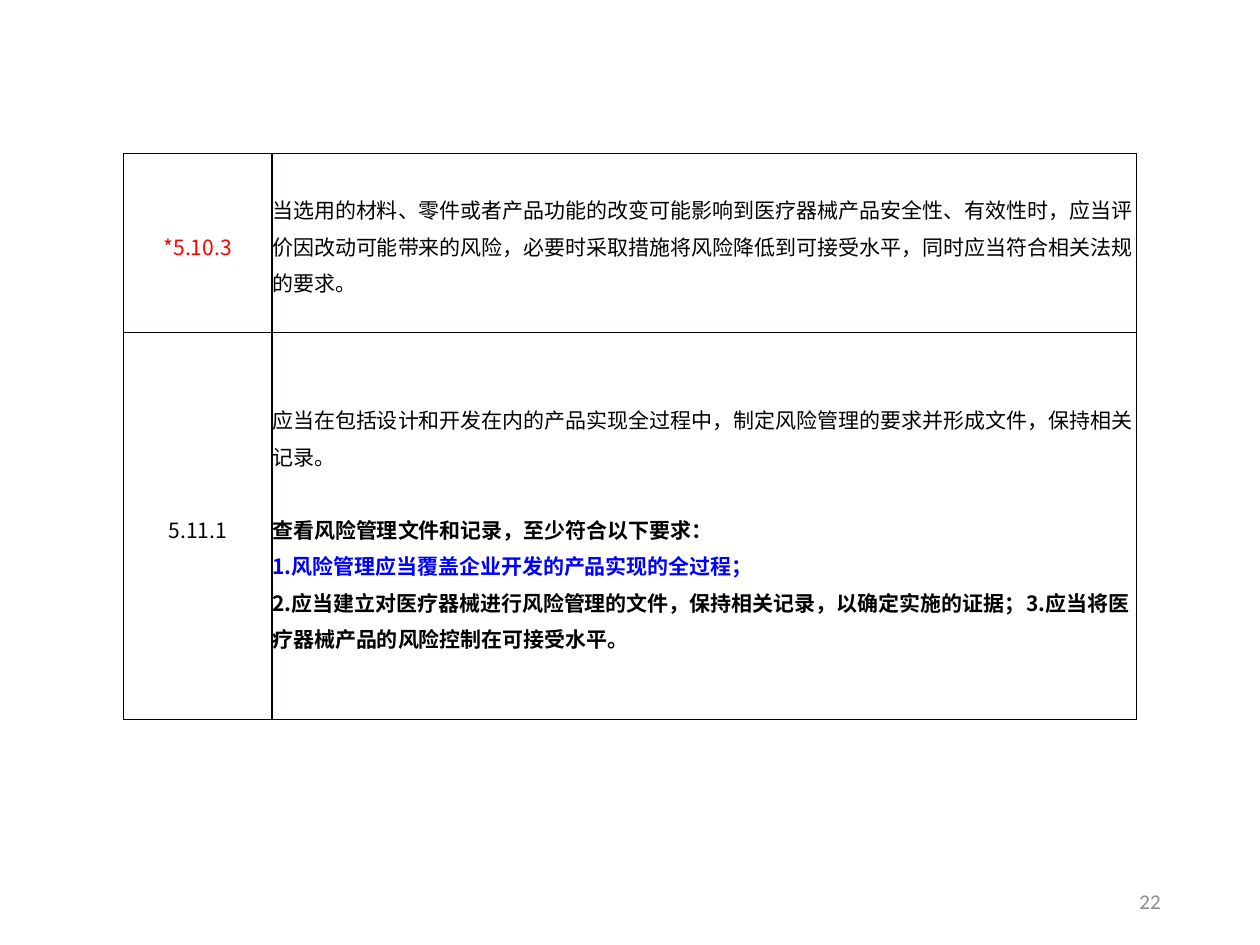
from dataclasses import dataclass

from lxml.etree import SubElement
from pptx import Presentation
from pptx.dml.color import RGBColor
from pptx.enum.text import MSO_ANCHOR as Anchor, PP_ALIGN as Align
from pptx.oxml import parse_xml
from pptx.oxml.ns import nsdecls, qn
from pptx.util import Inches, Pt

CJK_FONT = "Noto Sans CJK SC"
BORDERS = (("lnL", "080000", 1), ("lnR", "000000", 0.75),
           ("lnT", "080000", 1), ("lnB", "080000", 1))


@dataclass
class Line:
    text: str
    color: str = "000000"
    bold: bool = False
    before: float = 0


@dataclass
class Clause:
    number: Line
    lines: list[Line]
    height: float


CLAUSES = [
    Clause(
        Line("*5.10.3", "FF0000"),
        [Line("当选用的材料、零件或者产品功能的改变可能影响到医疗器械产品安全性、有效性时，"
              "应当评价因改动可能带来的风险，必要时采取措施将风险降低到可接受水平，"
              "同时应当符合相关法规的要求。")],
        1.42,
    ),
    Clause(
        Line("5.11.1"),
        [
            Line("应当在包括设计和开发在内的产品实现全过程中，制定风险管理的要求并形成文件，"
                 "保持相关记录。"),
            Line("查看风险管理文件和记录，至少符合以下要求：", bold=True, before=20.85),
            Line("1.风险管理应当覆盖企业开发的产品实现的全过程；", "0000FF", True),
            Line("2.应当建立对医疗器械进行风险管理的文件，保持相关记录，以确定实施的证据；"
                 "3.应当将医疗器械产品的风险控制在可接受水平。", bold=True),
        ],
        3.07,
    ),
]


def rgb(color: str) -> RGBColor:
    return RGBColor.from_string(color)


def write(para, text: str, *, font=CJK_FONT, color="000000", bold=False,
          align=Align.LEFT, spacing=1.2, before=0.0) -> None:
    para.alignment = align
    para.line_spacing = spacing
    para.space_before = Pt(before)
    span = para.add_run()
    span.text = text
    span.font.name = font
    span.font.size = Pt(12)
    span.font.bold = bold
    span.font.color.rgb = rgb(color)
    SubElement(span.font._element, qn("a:ea"), typeface=font)


def draw_borders(cell) -> None:
    properties = cell._tc.get_or_add_tcPr()
    for index, (side, color, width) in enumerate(BORDERS):
        properties.insert(index, parse_xml(
            f'<a:{side} {nsdecls("a")} w="{Pt(width)}"><a:solidFill>'
            f'<a:srgbClr val="{color}"/></a:solidFill></a:{side}>'))


def fill_cell(cell, lines: list[Line], align: Align) -> None:
    cell.margin_left = cell.margin_right = 0
    cell.margin_top = cell.margin_bottom = 0
    cell.vertical_anchor = Anchor.MIDDLE
    cell.fill.background()
    draw_borders(cell)
    frame = cell.text_frame
    for index, line in enumerate(lines):
        para = frame.add_paragraph() if index else frame.paragraphs[0]
        write(para, line.text, color=line.color, bold=line.bold,
              align=align, before=line.before)


def add_clauses(page, clauses: list[Clause]) -> None:
    height = sum(clause.height for clause in clauses)
    table = page.shapes.add_table(len(clauses), 2, Inches(0.98), Inches(1.22),
                                  Inches(8.04), Inches(height)).table
    table.first_row = table.horz_banding = False
    for column, width in zip(table.columns, (1.18, 6.86)):
        column.width = Inches(width)
    for index, clause in enumerate(clauses):
        table.rows[index].height = Inches(clause.height)
        fill_cell(table.cell(index, 0), [clause.number], Align.CENTER)
        fill_cell(table.cell(index, 1), clause.lines, Align.LEFT)


def add_page_number(page, number: str) -> None:
    box = page.shapes.add_textbox(Inches(7.06), Inches(6.95), Inches(2.25), Inches(0.4))
    frame = box.text_frame
    frame.word_wrap = True
    frame.vertical_anchor = Anchor.MIDDLE
    write(frame.paragraphs[0], number, font="Calibri", color="8C8C8C",
          align=Align.RIGHT, spacing=1.0)


def main() -> None:
    deck = Presentation()
    deck.slide_width, deck.slide_height = Inches(10), Inches(7.5)
    page = deck.slides.add_slide(deck.slide_layouts[6])
    add_page_number(page, "22")
    add_clauses(page, CLAUSES)
    deck.save("out.pptx")


if __name__ == "__main__":
    main()
